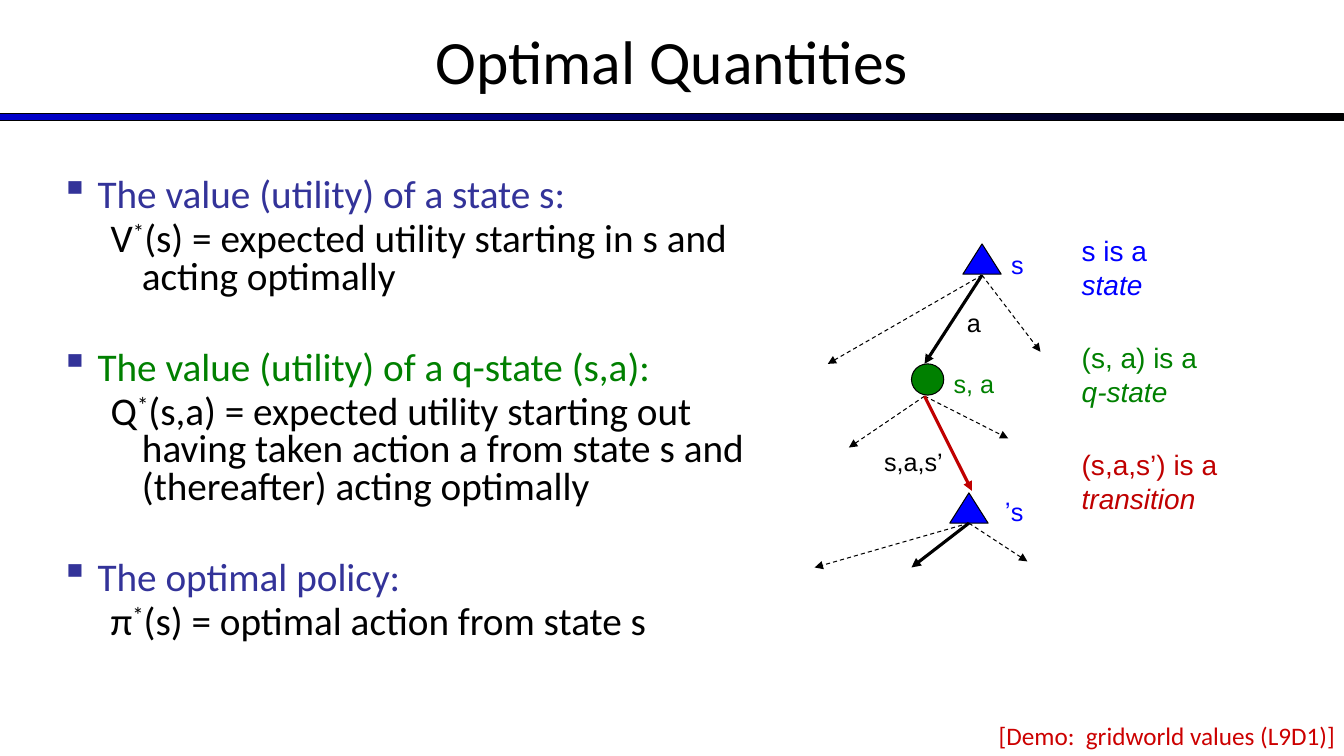
from lxml import etree
from pptx import Presentation
from pptx import util as u
from pptx.dml.color import RGBColor
from pptx.enum import dml, shapes, text
from pptx.oxml import ns

COLORS = {
    "black": "000000", "navy": "0000CC", "indigo": "333399", "blue": "0000FF",
    "green": "008000", "red": "C00000", "note": "CC0000",
}


def rgb(name):
    return RGBColor.from_string(COLORS[name])


def set_all(target, values):
    for name, value in values.items():
        setattr(target, name, value)


class SlideBuilder:
    body_font = "Calibri"
    label_font = "Arial"
    thin = u.Pt(0.75)
    thick = u.Pt(2.25)

    def __init__(self, slide):
        self.slide = slide

    def place(self, shape, box):
        names = ("left", "top", "width", "height")
        set_all(shape, dict(zip(names, map(u.Inches, box))))

    def run(self, paragraph, wording, size, color, font, **formats):
        run = paragraph.add_run()
        run.text = wording
        set_all(run.font, {"size": u.Pt(size), "name": font, **formats})
        run.font.color.rgb = rgb(color)
        return run

    def title(self, wording, box):
        title = self.slide.shapes.title
        self.place(title, box)
        title.text_frame.vertical_anchor = text.MSO_ANCHOR.MIDDLE
        paragraph = title.text_frame.paragraphs[0]
        paragraph.alignment = text.PP_ALIGN.CENTER
        self.run(paragraph, wording, 44, "black", self.body_font)

    def outlined(self, kind, box):
        shape = self.slide.shapes.add_shape(kind, *map(u.Inches, box))
        shape.shadow.inherit = False
        shape.line.color.rgb = rgb("black")
        shape.line.width = self.thin
        return shape

    def node(self, kind, box, color):
        shape = self.outlined(kind, box)
        shape.fill.solid()
        shape.fill.fore_color.rgb = rgb(color)

    def gradient_bar(self, box, colors):
        bar = self.outlined(shapes.MSO_SHAPE.RECTANGLE, box)
        bar.fill.gradient()
        bar.fill.gradient_angle = 0
        for stop, position, color in zip(bar.fill.gradient_stops, (0, 1), colors):
            stop.position = position
            stop.color.rgb = rgb(color)

    def arrow(self, start, end, color="black", dashed=True):
        arrow = self.slide.shapes.add_connector(
            shapes.MSO_CONNECTOR.STRAIGHT, *map(u.Inches, start + end))
        arrow.line.color.rgb = rgb(color)
        arrow.line.width = self.thin if dashed else self.thick
        if dashed:
            arrow.line.dash_style = dml.MSO_LINE.DASH
        line = arrow.line._get_or_add_ln()
        etree.SubElement(line, ns.qn("a:tailEnd"), type="triangle")
        etree.SubElement(arrow._element.spPr, ns.qn("a:effectLst"))

    def text_box(self, box):
        shape = self.slide.shapes.add_textbox(*map(u.Inches, box))
        shape.text_frame.word_wrap = True
        return shape.text_frame

    def label(self, wording, box, color, size=18, font=label_font, right=False):
        paragraph = self.text_box(box).paragraphs[0]
        if right:
            paragraph.alignment = text.PP_ALIGN.RIGHT
        self.run(paragraph, wording, size, color, font)
        return paragraph

    def legend(self, term, kind, box, color):
        paragraph = self.label(term, box, color, size=20)
        paragraph.add_line_break()
        self.run(paragraph, kind, 20, color, self.label_font, italic=True)

    def body_paragraph(self, paragraph, margin, indent, before):
        set_all(paragraph, {"line_spacing": 0.8, "space_before": u.Pt(before)})
        properties = paragraph._p.get_or_add_pPr()
        properties.set("marL", str(u.Inches(margin)))
        properties.set("indent", str(u.Inches(indent)))
        return properties

    def definitions(self, entries, box):
        frame = self.text_box(box)
        frame.margin_top = u.Inches(0.52)
        for index, (heading, color, symbol, meaning) in enumerate(entries):
            paragraph = frame.add_paragraph() if index else frame.paragraphs[0]
            properties = self.body_paragraph(
                paragraph, 0.37, -0.37, 38 if index else 0)
            bullet_color = etree.SubElement(properties, ns.qn("a:buClr"))
            etree.SubElement(
                bullet_color, ns.qn("a:srgbClr"), val=COLORS["indigo"])
            etree.SubElement(properties, ns.qn("a:buChar"), char="▪")
            self.run(paragraph, heading, 28, color, self.body_font)
            paragraph = frame.add_paragraph()
            paragraph.level = 1
            self.body_paragraph(paragraph, 0.81, -0.31, 4.6)
            self.run(paragraph, symbol, 28, "black", self.body_font)
            star = self.run(paragraph, "*", 28, "black", self.body_font)
            star.font._element.set("baseline", "30000")
            self.run(paragraph, meaning, 28, "black", self.body_font)


def main():
    presentation = Presentation()
    presentation.slide_width = u.Inches(13.33)
    presentation.slide_height = u.Inches(7.5)
    slide = presentation.slides.add_slide(presentation.slide_layouts[5])
    builder = SlideBuilder(slide)

    builder.gradient_bar((0, 1.13, 13.33, 0.07), ("navy", "black"))
    builder.title("Optimal Quantities", (0, -0.03, 13.33, 1.25))
    builder.definitions([
        ("The value (utility) of a state s:", "indigo", "V",
         "(s) = expected utility starting in s and acting optimally"),
        ("The value (utility) of a q-state (s,a):", "green", "Q",
         "(s,a) = expected utility starting out having taken action a "
         "from state s and (thereafter) acting optimally"),
        ("The optimal policy:", "indigo", "π",
         "(s) = optimal action from state s"),
    ], (0.5, 1.25, 7.33, 5.42))

    triangle = shapes.MSO_SHAPE.ISOSCELES_TRIANGLE
    for left, top in ((9.55, 2.42), (9.42, 4.89)):
        builder.node(triangle, (left, top, 0.38, 0.3), "blue")
    builder.node(shapes.MSO_SHAPE.OVAL, (9.04, 3.61, 0.32, 0.31), "green")

    fans = [
        ((9.74, 2.73), (9.17, 3.61), "black", [(8.21, 3.61), (10.32, 3.49)]),
        ((9.17, 3.93), (9.64, 4.87), "red", [(8.42, 4.44), (10, 4.35)]),
        ((9.61, 5.19), (9.04, 5.63), "black", [(8.08, 5.63), (10.19, 5.57)]),
    ]
    for origin, chosen, color, others in fans:
        for other in others:
            builder.arrow(origin, other)
        builder.arrow(origin, chosen, color, dashed=False)

    builder.label("a", (9.49, 3, 0.32, 0.3), "black")
    builder.label("s", (9.93, 2.42, 0.32, 0.4), "blue")
    builder.label("s, a", (9.36, 3.61, 0.64, 0.4), "green")
    builder.label("s,a,s’", (8.67, 4.38, 0.9, 0.3), "black")
    successor = builder.label("s’", (9.83, 4.87, 0.42, 0.4), "blue", right=True)
    successor._p.get_or_add_pPr().set("rtl", "1")

    legend = [
        ("s is a", "state", 1.15, "blue"),
        ("(s, a) is a", "q-state", 1.42, "green"),
        ("(s,a,s’) is a", "transition", 2.37, "red"),
    ]
    for row, (term, kind, width, color) in enumerate(legend):
        builder.legend(term, kind, (10.63, 2.27 + 1.06 * row, width, 0.77), color)
    builder.label("[Demo:  gridworld values (L9D1)]", (8.42, 7.1, 4.92, 0.4),
                  "note", font=builder.body_font, right=True)

    presentation.save("out.pptx")


if __name__ == "__main__":
    main()
